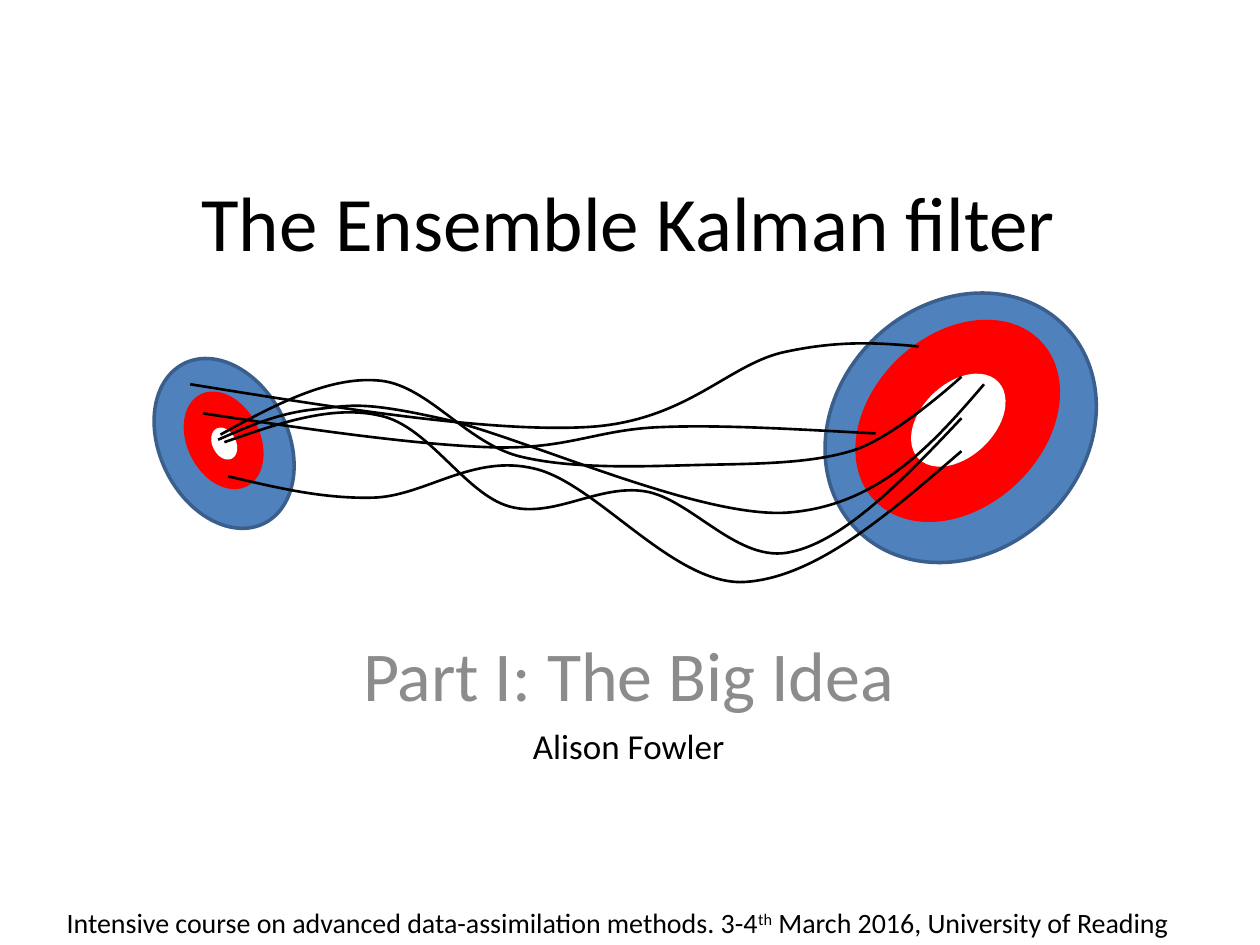
"""Build the title slide of a talk on the Ensemble Kalman filter."""
from lxml.etree import SubElement
from pptx import Presentation
from pptx.dml.color import RGBColor
from pptx.enum.shapes import MSO_SHAPE
from pptx.enum.text import MSO_ANCHOR as Anchor, PP_ALIGN as Align
from pptx.oxml.ns import qn
from pptx.util import Pt

COLORS = {"black": "000000", "gray": "8C8C8C", "blue": "4F81BD", "navy": "3A5F8C",
          "red": "FF0000", "white": "FFFFFF"}
FONT = "Calibri"

TITLE = "The Ensemble Kalman filter"
SUBTITLE = [("Part I: The Big Idea", 40, "gray", 3), ("Alison Fowler", 20, "black", 10.4)]
FOOTER = ["Intensive course on advanced data-assimilation methods. 3-4", "th",
          " March 2016, University of Reading"]

RING_COLORS = [("blue", "navy"), ("red", "red"), ("white", "white")]
TARGETS = [
    (46.2, [(478.1, 161.3, 141.8, 166.3), (499, 175.7, 96.5, 129.6), (527.8, 209.5, 39.6, 61.2)]),
    (333.3, [(91.4, 202.3, 73.4, 102.2), (108, 223.2, 39.6, 56.9), (122.4, 244.8, 11.5, 17.3)]),
]

TRAJECTORIES = [
    [(128.2, 252.7), (159.1, 241.9), (190.1, 231.1), (217.4, 237.6), (244.8, 243.4),
     (265.7, 282.2), (290.9, 289.4), (316.1, 296.6), (342, 276.5), (368.6, 280.8),
     (395.3, 285.1), (421.9, 322.6), (452.2, 315.4), (482.4, 308.9), (516.2, 274.3),
     (549.4, 239)],
    [(126, 248.4), (156.2, 231.8), (187.2, 215.3), (215.3, 217.4), (243.4, 218.9),
     (265, 252), (295.9, 260.6), (327.6, 268.6), (369.4, 266.4), (401.8, 265.7),
     (433.4, 265), (464.4, 265), (488.9, 257), (513.4, 248.4), (549.4, 215.3),
     (549.4, 215.3)],
    [(124.6, 251.3), (141.1, 244.1), (158.4, 236.2), (179.3, 234), (200.2, 231.8),
     (205.9, 229), (251.3, 239), (295.9, 248.4), (397.4, 295.9), (449.3, 293),
     (501.1, 289.4), (532.1, 254.9), (562.3, 219.6)],
    [(115.9, 236.2), (177.1, 245.5), (237.6, 254.2), (280.8, 255.6), (324.7, 257),
     (340.6, 245.5), (377.3, 244.1), (414, 242.6), (457.2, 245.5), (500.4, 247.7)],
    [(130.3, 272.2), (157.7, 278.6), (184.3, 285.1), (213.1, 284.4), (242.6, 283.7),
     (270, 259.2), (305.3, 267.8), (340.6, 275.8), (384.5, 334.1), (424.8, 332.6),
     (465.8, 330.5), (507.6, 293.8), (549.4, 257.8)],
    [(108.7, 219.6), (193.7, 233.3), (278.6, 247), (334.8, 244.1), (391, 241.2),
     (414.7, 209.5), (446.4, 201.6), (478.1, 194.4), (501.8, 195.8), (524.9, 198)],
]


def color(name):
    return RGBColor.from_string(COLORS[name])


def style_runs(paragraph, size, color_name):
    for run in paragraph.runs:
        run.font.name = FONT
        run.font.size = Pt(size)
        run.font.color.rgb = color(color_name)


def add_text_frame(slide, left, top, width, height, wrap=True):
    frame = slide.shapes.add_textbox(Pt(left), Pt(top), Pt(width), Pt(height)).text_frame
    frame.word_wrap = wrap
    return frame


def add_target(slide, rotation, rings):
    group = slide.shapes.add_group_shape()
    for box, (fill, line) in zip(rings, RING_COLORS):
        ring = group.shapes.add_shape(MSO_SHAPE.OVAL, *map(Pt, box))
        ring.rotation = rotation
        ring.shadow.inherit = False
        ring.fill.solid()
        ring.fill.fore_color.rgb = color(fill)
        ring.line.color.rgb = color(line)
        ring.line.width = Pt(2)


def add_trajectory(slide, points):
    start, *controls = [(Pt(x), Pt(y)) for x, y in points]
    builder = slide.shapes.build_freeform(*start)
    builder.add_line_segments(controls, close=False)
    curve = builder.convert_to_shape()
    curve.shadow.inherit = False
    curve.fill.background()
    curve.line.color.rgb = color("black")
    curve.line.width = Pt(1.5)
    segments = list(curve._element.iter(qn("a:lnTo")))
    outline = segments[0].getparent()
    for index in range(0, len(segments), 3):
        bezier = SubElement(outline, qn("a:cubicBezTo"))
        for segment in segments[index:index + 3]:
            bezier.append(segment[0])
            outline.remove(segment)


def main():
    presentation = Presentation()
    presentation.slide_width, presentation.slide_height = Pt(720), Pt(540)
    slide = presentation.slides.add_slide(presentation.slide_layouts[6])

    title = add_text_frame(slide, 33, 90, 652.5, 72.5)
    title.vertical_anchor = Anchor.MIDDLE
    title.text = TITLE
    title.paragraphs[0].alignment = Align.CENTER
    style_runs(title.paragraphs[0], 44, "black")

    subtitle = add_text_frame(slide, 33, 366.5, 652.5, 72.5)
    subtitle.text = "\n".join(text for text, *_ in SUBTITLE)
    for paragraph, (_, size, color_name, space) in zip(subtitle.paragraphs, SUBTITLE):
        paragraph.alignment = Align.CENTER
        paragraph.line_spacing = 0.8
        paragraph.space_before = Pt(space)
        style_runs(paragraph, size, color_name)

    for rotation, rings in TARGETS:
        add_target(slide, rotation, rings)
    for points in TRAJECTORIES:
        add_trajectory(slide, points)

    footer = add_text_frame(slide, 31, 514, 653, 26.6, wrap=False).paragraphs[0]
    for text in FOOTER:
        footer.add_run().text = text
    style_runs(footer, 16, "black")
    footer.runs[1]._r.get_or_add_rPr().set("baseline", "30000")

    presentation.save("out.pptx")


if __name__ == "__main__":
    main()
